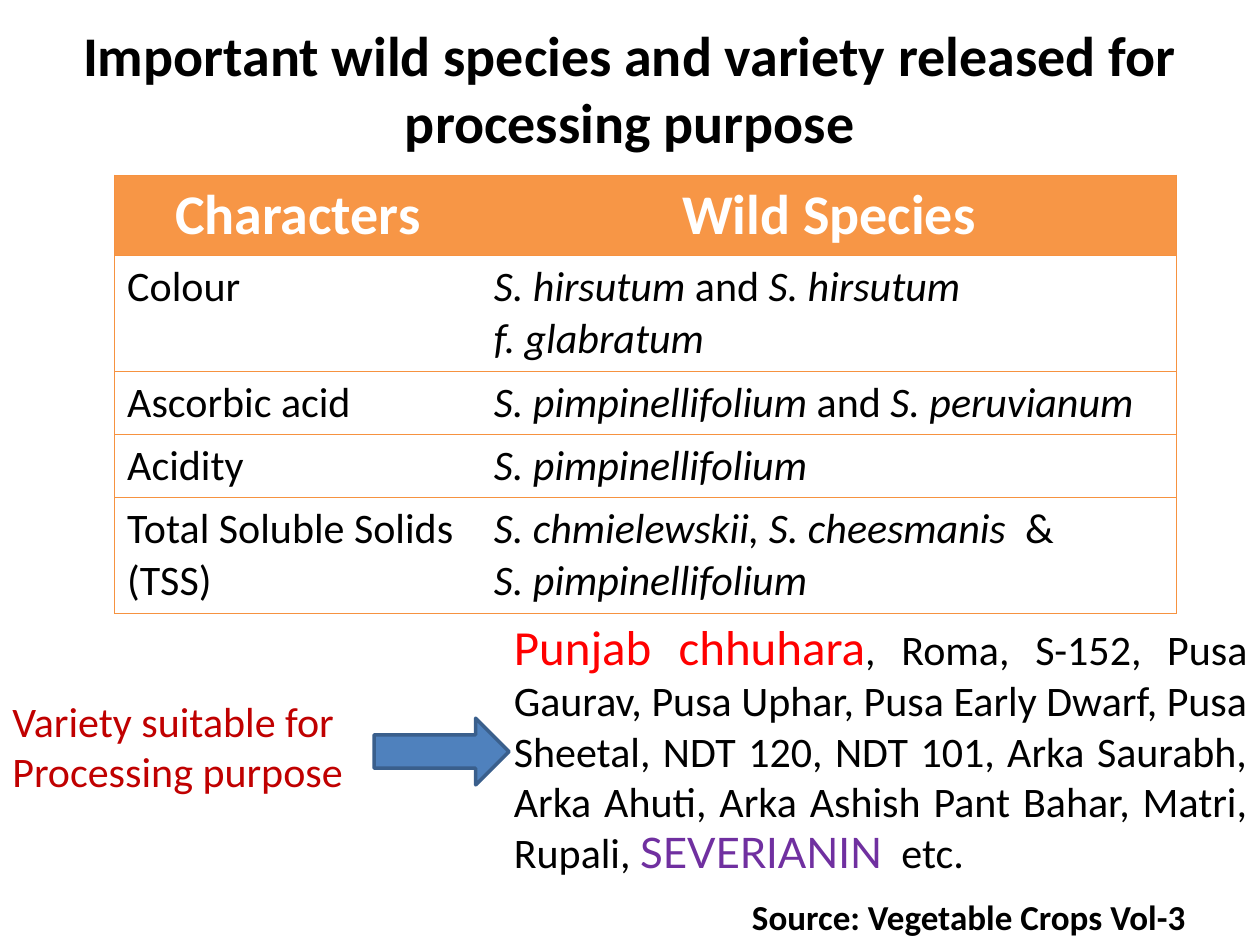
from dataclasses import dataclass

from lxml import etree
from pptx import Presentation
from pptx.dml.color import RGBColor
from pptx.enum.shapes import MSO_SHAPE
from pptx.enum.text import MSO_ANCHOR, PP_ALIGN
from pptx.oxml.ns import qn
from pptx.util import Inches, Pt

LEFT, CENTER, JUSTIFY = PP_ALIGN.LEFT, PP_ALIGN.CENTER, PP_ALIGN.JUSTIFY
TOP, MIDDLE = MSO_ANCHOR.TOP, MSO_ANCHOR.MIDDLE
RIGHT_ARROW = MSO_SHAPE.RIGHT_ARROW


@dataclass(frozen=True)
class Theme:
    font: str = "Calibri"
    accent_font: str = "Lato"
    black: str = "000000"
    white: str = "FFFFFF"
    orange: str = "F79646"
    border: str = "F69240"
    red: str = "FF0000"
    dark_red: str = "C00000"
    purple: str = "7030A0"
    arrow_fill: str = "4F81BD"
    arrow_line: str = "3A5F8C"
    title: int = 32
    highlight: int = 28
    body: int = 24
    source: int = 20


THEME = Theme()


@dataclass(frozen=True)
class Run:
    text: str
    size: int = THEME.body
    color: str = THEME.black
    font: str = THEME.font
    bold: bool = False
    italic: bool = False


@dataclass(frozen=True)
class Box:
    left: float
    top: float
    width: float
    height: float

    def lengths(self) -> tuple:
        return tuple(Inches(n) for n in (self.left, self.top, self.width, self.height))


@dataclass(frozen=True)
class Row:
    height: float
    character: list
    species: list


def species(text: str) -> Run:
    return Run(text, italic=True)


def heading(text: str) -> Run:
    return Run(text, size=THEME.title, color=THEME.white, bold=True)


COLUMN_WIDTHS = (2.91, 5.52)
ROWS = [
    Row(0.64, [[heading("Characters")]], [[heading("Wild Species")]]),
    Row(0.92, [[Run("Colour")]],
        [[species("S. hirsutum "), Run("and "), species("S. hirsutum")],
         [species("f. glabratum")]]),
    Row(0.5, [[Run("Ascorbic acid")]],
        [[species("S. pimpinellifolium "), Run("and "), species("S. peruvianum")]]),
    Row(0.5, [[Run("Acidity")]], [[species("S. pimpinellifolium")]]),
    Row(0.92, [[Run("Total Soluble Solids (TSS)")]],
        [[species("S. chmielewskii, S. cheesmanis  "), Run("&")],
         [species("S. pimpinellifolium")]]),
]
VARIETIES = [
    Run("Punjab chhuhara", size=THEME.highlight, color=THEME.red),
    Run(", Roma, S-152, Pusa Gaurav, Pusa Uphar, Pusa Early Dwarf, Pusa Sheetal, "
        "NDT 120, NDT 101, Arka Saurabh, Arka Ahuti, Arka Ashish Pant Bahar, "
        "Matri, Rupali, "),
    Run("SEVERIANIN", color=THEME.purple, font=THEME.accent_font),
    Run("  etc."),
]


def write_text(text_frame, paragraphs: list, *, align=LEFT) -> None:
    for index, runs in enumerate(paragraphs):
        paragraph = text_frame.add_paragraph() if index else text_frame.paragraphs[0]
        paragraph.alignment = align
        for item in runs:
            run = paragraph.add_run()
            run.text = item.text
            run.font.name = item.font
            run.font.size = Pt(item.size)
            run.font.bold = item.bold
            run.font.italic = item.italic
            run.font.color.rgb = RGBColor.from_string(item.color)


def add_text(slide, box: Box, runs: list, *, align=LEFT, anchor=TOP) -> None:
    text_frame = slide.shapes.add_textbox(*box.lengths()).text_frame
    text_frame.word_wrap = True
    text_frame.vertical_anchor = anchor
    write_text(text_frame, [runs], align=align)


def set_borders(cell, visible: dict) -> None:
    """Draw the sides marked True and hide the others."""
    properties = cell._tc.get_or_add_tcPr()
    for index, side in enumerate("LRTB"):
        line = etree.Element(qn(f"a:ln{side}"), w=str(Pt(0.75)))
        if visible[side]:
            fill = etree.SubElement(line, qn("a:solidFill"))
            etree.SubElement(fill, qn("a:srgbClr"), val=THEME.border)
        else:
            etree.SubElement(line, qn("a:noFill"))
        properties.insert(index, line)


def add_species_table(slide, left: float, top: float) -> None:
    box = Box(left, top, sum(COLUMN_WIDTHS), sum(row.height for row in ROWS))
    table = slide.shapes.add_table(len(ROWS), len(COLUMN_WIDTHS), *box.lengths()).table
    table.horz_banding = False
    for column, width in zip(table.columns, COLUMN_WIDTHS):
        column.width = Inches(width)
    for row_index, row in enumerate(ROWS):
        table.rows[row_index].height = Inches(row.height)
        is_header = row_index == 0
        for column_index, paragraphs in enumerate((row.character, row.species)):
            cell = table.cell(row_index, column_index)
            cell.fill.solid()
            color = THEME.orange if is_header else THEME.white
            cell.fill.fore_color.rgb = RGBColor.from_string(color)
            write_text(cell.text_frame, paragraphs, align=CENTER if is_header else LEFT)
            is_first = column_index == 0
            set_borders(cell, {"L": is_first, "R": not is_first, "T": True, "B": True})


def add_arrow(slide, box: Box) -> None:
    arrow = slide.shapes.add_shape(RIGHT_ARROW, *box.lengths())
    arrow.shadow.inherit = False
    arrow.fill.solid()
    arrow.fill.fore_color.rgb = RGBColor.from_string(THEME.arrow_fill)
    arrow.line.color.rgb = RGBColor.from_string(THEME.arrow_line)
    arrow.line.width = Pt(2)


def main() -> None:
    presentation = Presentation()
    presentation.slide_width, presentation.slide_height = Inches(10), Inches(7.5)
    slide = presentation.slides.add_slide(presentation.slide_layouts[6])
    title = Run("Important wild species and variety released for processing purpose",
                size=THEME.title, bold=True)
    add_text(slide, Box(0.5, 0, 9, 1.39), [title], align=CENTER, anchor=MIDDLE)
    add_species_table(slide, 0.91, 1.39)
    add_text(slide, Box(3.98, 4.84, 6.02, 2.19), VARIETIES, align=JUSTIFY)
    add_text(slide, Box(0, 5.47, 4.06, 0.91),
             [Run("Variety suitable for Processing purpose", color=THEME.dark_red)])
    add_arrow(slide, Box(2.97, 5.7, 1.07, 0.53))
    add_text(slide, Box(5.87, 7.06, 4.57, 0.44),
             [Run("Source: Vegetable Crops Vol-3", size=THEME.source, bold=True)])
    presentation.save("out.pptx")


if __name__ == "__main__":
    main()
